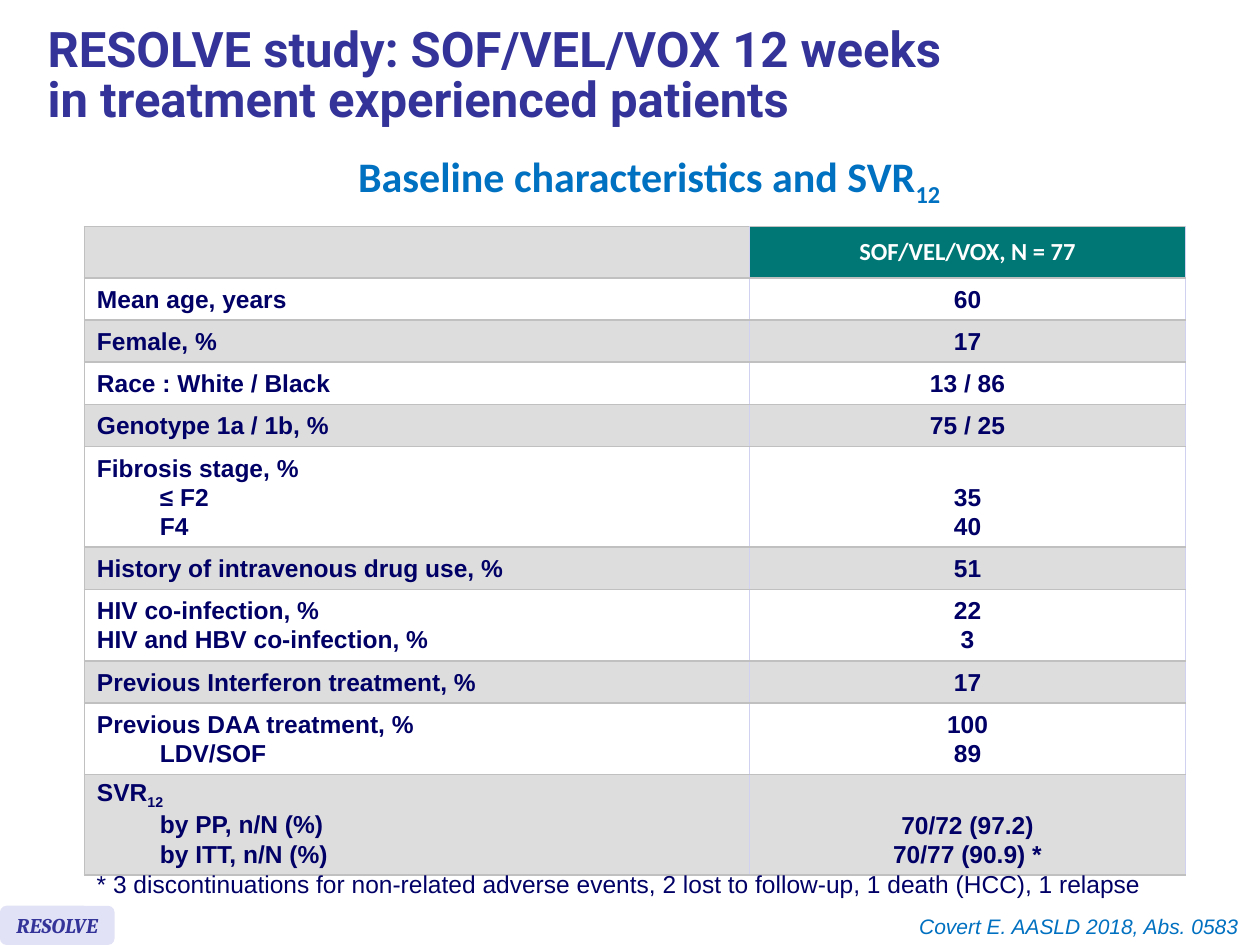
from dataclasses import dataclass
from typing import Optional

from lxml import etree
from pptx import Presentation
from pptx import util as u
from pptx.dml.color import RGBColor
from pptx.enum import shapes, text
from pptx.oxml import ns

COLORS = {
    "title": "333399", "accent": "0070C0", "body": "000066", "white": "FFFFFF",
    "band": "DDDDDD", "header": "007774", "badge": "E2E2F6",
    "rule": "C0C0C0", "divider": "D0D0F0",
}
ALIGN = text.PP_ALIGN
ANCHOR = text.MSO_ANCHOR
CELL_LINE = u.Pt(16.6)


@dataclass(frozen=True)
class Style:
    font: str
    size: int
    color: str
    bold: bool = False
    italic: bool = False


@dataclass(frozen=True)
class Line:
    text: str
    subscript: str = ""
    indented: bool = False


@dataclass(frozen=True)
class Row:
    labels: tuple[Line, ...]
    values: tuple[Line, ...]


@dataclass(frozen=True)
class Label:
    box: tuple[float, float, float, float]  # left, top, width, height in cm
    line: Line
    style: Style
    align: ALIGN = ALIGN.LEFT
    anchor: ANCHOR = ANCHOR.TOP
    wrap: bool = False
    spacing: Optional[float] = None
    fill: str = ""


BODY = Style("Arial", 14, "body", bold=True)
HEADER = Style("Calibri", 14, "white", bold=True)

ROWS = [
    Row((Line(""),), (Line("SOF/VEL/VOX, N = 77"),)),
    Row((Line("Mean age, years"),), (Line("60"),)),
    Row((Line("Female, %"),), (Line("17"),)),
    Row((Line("Race : White / Black"),), (Line("13 / 86"),)),
    Row((Line("Genotype 1a / 1b, %"),), (Line("75 / 25"),)),
    Row((Line("Fibrosis stage, %"), Line("≤ F2", indented=True), Line("F4", indented=True)),
        (Line("35"), Line("40"))),
    Row((Line("History of intravenous drug use, %"),), (Line("51"),)),
    Row((Line("HIV co-infection, %"), Line("HIV and HBV co-infection, %")),
        (Line("22"), Line("3"))),
    Row((Line("Previous Interferon treatment, %"),), (Line("17"),)),
    Row((Line("Previous DAA treatment, %"), Line("LDV/SOF", indented=True)),
        (Line("100"), Line("89"))),
    Row((Line("SVR", "12"), Line("by PP, n/N (%)", indented=True),
         Line("by ITT, n/N (%)", indented=True)),
        (Line("70/72 (97.2)"), Line("70/77 (90.9) *"))),
]

LABELS = [
    Label((1.09, 3.53, 24, 0.89), Line("Baseline characteristics and SVR", "12"),
          Style("Calibri", 24, "accent", bold=True), ALIGN.CENTER, wrap=True,
          spacing=u.Pt(15.2)),
    Label((1.7, 17.4, 21.72, 0.86),
          Line("* 3 discontinuations for non-related adverse events, "
               "2 lost to follow-up, 1 death (HCC), 1 relapse"),
          Style("Arial", 14, "body")),
    Label((0, 18.26, 2.31, 0.79), Line("RESOLVE"),
          Style("Cambria", 12, "title", bold=True, italic=True),
          ALIGN.CENTER, ANCHOR.MIDDLE, fill="badge"),
    Label((0.71, 0.2, 23.85, 2.72),
          Line("RESOLVE study: SOF/VEL/VOX 12 weeks\vin treatment experienced patients"),
          Style("Roboto", 28, "title", bold=True), anchor=ANCHOR.MIDDLE, wrap=True,
          spacing=0.85),
    Label((18.21, 18.29, 7.01, 0.76), Line("Covert E. AASLD 2018, Abs. 0583"),
          Style("Arial", 12, "accent", italic=True), ALIGN.RIGHT),
]


def rgb(name: str) -> RGBColor:
    return RGBColor.from_string(COLORS[name])


def write_line(paragraph, line: Line, style: Style, align: ALIGN, spacing=None) -> None:
    paragraph.text = line.text
    paragraph.alignment = align
    if spacing is not None:
        paragraph.line_spacing = spacing
    if line.indented:
        paragraph.level = 1
        properties = paragraph._p.get_or_add_pPr()
        properties.set("marL", str(u.Cm(1.27)))
        properties.set("indent", "0")
    if line.subscript:
        run = paragraph.add_run()
        run.text = line.subscript
        run.font._element.set("baseline", "-25000")
    for run in paragraph.runs:
        run.font.name = style.font
        run.font.size = u.Pt(style.size)
        run.font.bold = style.bold
        run.font.italic = style.italic
        run.font.color.rgb = rgb(style.color)


def add_label(slide, label: Label) -> None:
    box = [u.Cm(length) for length in label.box]
    if label.fill:
        shape = slide.shapes.add_shape(shapes.MSO_SHAPE.ROUNDED_RECTANGLE, *box)
        shape.shadow.inherit = False
        shape.fill.solid()
        shape.fill.fore_color.rgb = rgb(label.fill)
        shape.line.fill.background()
    else:
        shape = slide.shapes.add_textbox(*box)
    frame = shape.text_frame
    frame.word_wrap = label.wrap
    frame.vertical_anchor = label.anchor
    write_line(frame.paragraphs[0], label.line, label.style, label.align, label.spacing)


def set_borders(cell, first_column: bool) -> None:
    sides = {"lnL": "rule" if first_column else "divider", "lnR": "divider",
             "lnT": "rule", "lnB": "rule"}
    properties = cell._tc.get_or_add_tcPr()
    for index, (side, color) in enumerate(sides.items()):
        border = etree.Element(ns.qn(f"a:{side}"), w=str(u.Pt(1)))
        fill = etree.SubElement(border, ns.qn("a:solidFill"))
        etree.SubElement(fill, ns.qn("a:srgbClr"), val=COLORS[color])
        properties.insert(index, border)  # borders precede the cell fill


def fill_cell(cell, lines: tuple[Line, ...], style: Style, align: ALIGN,
              anchor: ANCHOR, fill: str) -> None:
    cell.fill.solid()
    cell.fill.fore_color.rgb = rgb(fill)
    cell.vertical_anchor = anchor
    frame = cell.text_frame
    for index, line in enumerate(lines):
        paragraph = frame.add_paragraph() if index else frame.paragraphs[0]
        write_line(paragraph, line, style, align, CELL_LINE)


def add_results_table(slide) -> None:
    heights = [u.Cm(0.26 + 0.59 * len(row.labels)) for row in ROWS]
    widths = [u.Cm(13.41), u.Cm(8.79)]
    table = slide.shapes.add_table(len(ROWS), len(widths), u.Cm(1.7), u.Cm(4.57),
                                   sum(widths), sum(heights)).table
    table.first_row = table.horz_banding = False
    for column, width in zip(table.columns, widths):
        column.width = width
    for index, (row, height) in enumerate(zip(ROWS, heights)):
        table.rows[index].height = height
        band = "white" if index % 2 else "band"
        label_cell, value_cell = table.cell(index, 0), table.cell(index, 1)
        fill_cell(label_cell, row.labels, BODY, ALIGN.LEFT, ANCHOR.MIDDLE, band)
        # Values without a heading line sit beside the last labels
        anchor = ANCHOR.MIDDLE if len(row.values) == len(row.labels) else ANCHOR.BOTTOM
        fill_cell(value_cell, row.values, BODY if index else HEADER, ALIGN.CENTER,
                  anchor, band if index else "header")
        set_borders(label_cell, True)
        set_borders(value_cell, False)


def main() -> None:
    presentation = Presentation()
    presentation.slide_width, presentation.slide_height = u.Cm(25.4), u.Cm(19.05)
    slide = presentation.slides.add_slide(presentation.slide_layouts[6])
    add_results_table(slide)
    for label in LABELS:
        add_label(slide, label)
    presentation.save("out.pptx")


if __name__ == "__main__":
    main()
